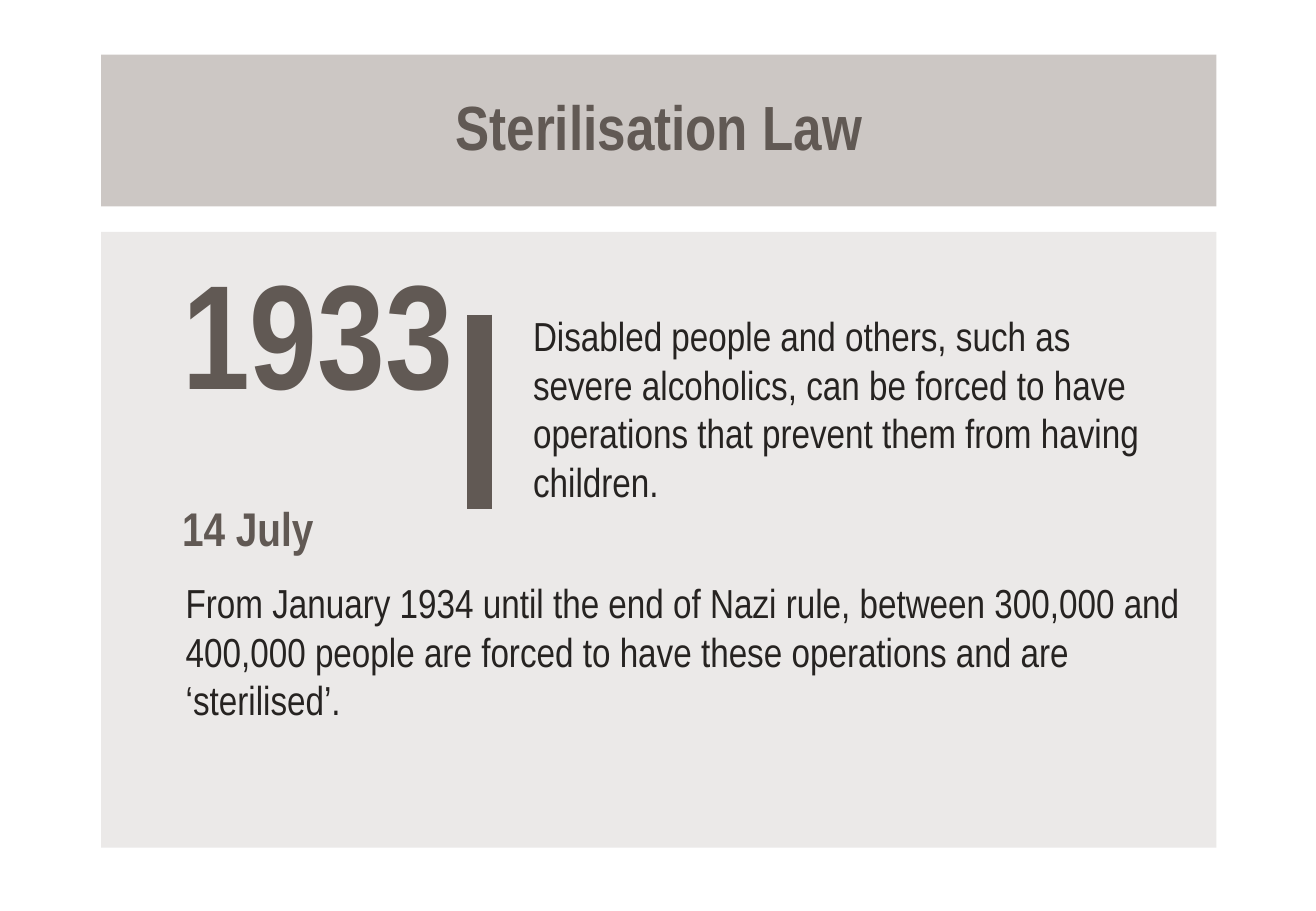
"""Build the Sterilisation Law slide on a grid of 130 columns by 90 rows."""
from dataclasses import dataclass
from typing import Optional

from lxml import etree
from pptx import Presentation, util as u
from pptx.dml.color import RGBColor
from pptx.enum import shapes, text
from pptx.oxml import ns

COLS, ROWS = 130, 90


@dataclass(frozen=True)
class Theme:
    """Colours, type sizes and font of the slide."""
    font: str = "Arial Narrow"
    dark: str = "615954"
    ink: str = "262321"
    band: str = "CCC7C4"
    panel: str = "EBE9E8"
    title: int = 37
    year: int = 88
    date: int = 28
    body: int = 24
    rule: int = 15
    gap: int = 47


@dataclass(frozen=True)
class Area:
    """A place on the grid, in columns and rows."""
    col: float
    row: float
    wide: float
    high: float


@dataclass(frozen=True)
class Line:
    """One paragraph and its format."""
    words: str
    size: int
    tint: str
    bold: bool = False
    gap: int = 0


@dataclass(frozen=True)
class Block:
    """A box with an optional fill and its paragraphs."""
    area: Area
    lines: tuple[Line, ...] = ()
    fill: Optional[str] = None
    center: bool = False
    lead: Optional[float] = None


LOOK = Theme()
BLOCKS = (
    Block(Area(10, 22.92, 110.16, 60.84), fill=LOOK.panel),
    Block(Area(16.8, 28.08, 30.24, 22.56), (
        Line("1933", LOOK.year, LOOK.dark, bold=True),
        Line("14 July", LOOK.date, LOOK.dark, bold=True, gap=LOOK.gap))),
    Block(Area(51.48, 29.04, 62.76, 22.56), (
        Line("Disabled people and others, such as severe alcoholics, can be "
             "forced to have operations that prevent them from having "
             "children.", LOOK.body, LOOK.ink),)),
    Block(Area(10, 5.4, 110.16, 15), (
        Line("Sterilisation Law", LOOK.title, LOOK.dark, bold=True),),
        fill=LOOK.band, center=True, lead=0.9),
    Block(Area(17.16, 49.68, 104.52, 29.28), (
        Line("From January 1934 until the end of Nazi rule, between 300,000 "
             "and 400,000 people are forced to have these operations and are "
             "‘sterilised’.", LOOK.body, LOOK.ink),)),
)
RULE = Area(47.4, 31.08, 0, 19.2)


def place(deck, area: Area) -> tuple[int, int, int, int]:
    """Turn a grid area into left, top, width and height."""
    col, row = deck.slide_width / COLS, deck.slide_height / ROWS
    return (round(area.col * col), round(area.row * row),
            round(area.wide * col), round(area.high * row))


def write(para, words: str, *, size: int, tint: str, bold: bool = False,
          gap: int = 0, center: bool = False,
          lead: Optional[float] = None) -> None:
    """Write one formatted paragraph."""
    para.alignment = text.PP_ALIGN.CENTER if center else text.PP_ALIGN.LEFT
    para.space_before = u.Pt(gap)
    para.line_spacing = lead
    run = para.add_run()
    run.text = words
    run.font.name = LOOK.font
    run.font.size = u.Pt(size)
    run.font.bold = bold
    run.font.color.rgb = RGBColor.from_string(tint)


def draw(deck, slide, block: Block) -> None:
    """Draw a block as a filled rectangle or a plain text box."""
    spot = place(deck, block.area)
    if block.fill:
        box = slide.shapes.add_shape(shapes.MSO_SHAPE.RECTANGLE, *spot)
        box.shadow.inherit = False
        box.fill.solid()
        box.fill.fore_color.rgb = RGBColor.from_string(block.fill)
        box.line.fill.background()
    else:
        box = slide.shapes.add_textbox(*spot)
    frame = box.text_frame
    frame.word_wrap = True
    frame.vertical_anchor = text.MSO_ANCHOR.MIDDLE
    for num, line in enumerate(block.lines):
        para = frame.add_paragraph() if num else frame.paragraphs[0]
        write(para, line.words, size=line.size, tint=line.tint,
              bold=line.bold, gap=line.gap, center=block.center,
              lead=block.lead)


def rule(deck, slide, area: Area) -> None:
    """Draw the thick bar between the year and its text."""
    left, top, wide, high = place(deck, area)
    bar = slide.shapes.add_connector(
        shapes.MSO_CONNECTOR.STRAIGHT, left, top, left + wide, top + high)
    bar.line.width = u.Pt(LOOK.rule)
    bar.line.color.rgb = RGBColor.from_string(LOOK.dark)
    etree.SubElement(bar.element.spPr, ns.qn("a:effectLst"))


def main() -> None:
    """Build and save the deck."""
    deck = Presentation()
    deck.slide_width, deck.slide_height = u.Inches(10.83), u.Inches(7.5)
    slide = deck.slides.add_slide(deck.slide_layouts[6])
    for block in BLOCKS:
        draw(deck, slide, block)
    rule(deck, slide, RULE)
    deck.save("out.pptx")


if __name__ == "__main__":
    main()
